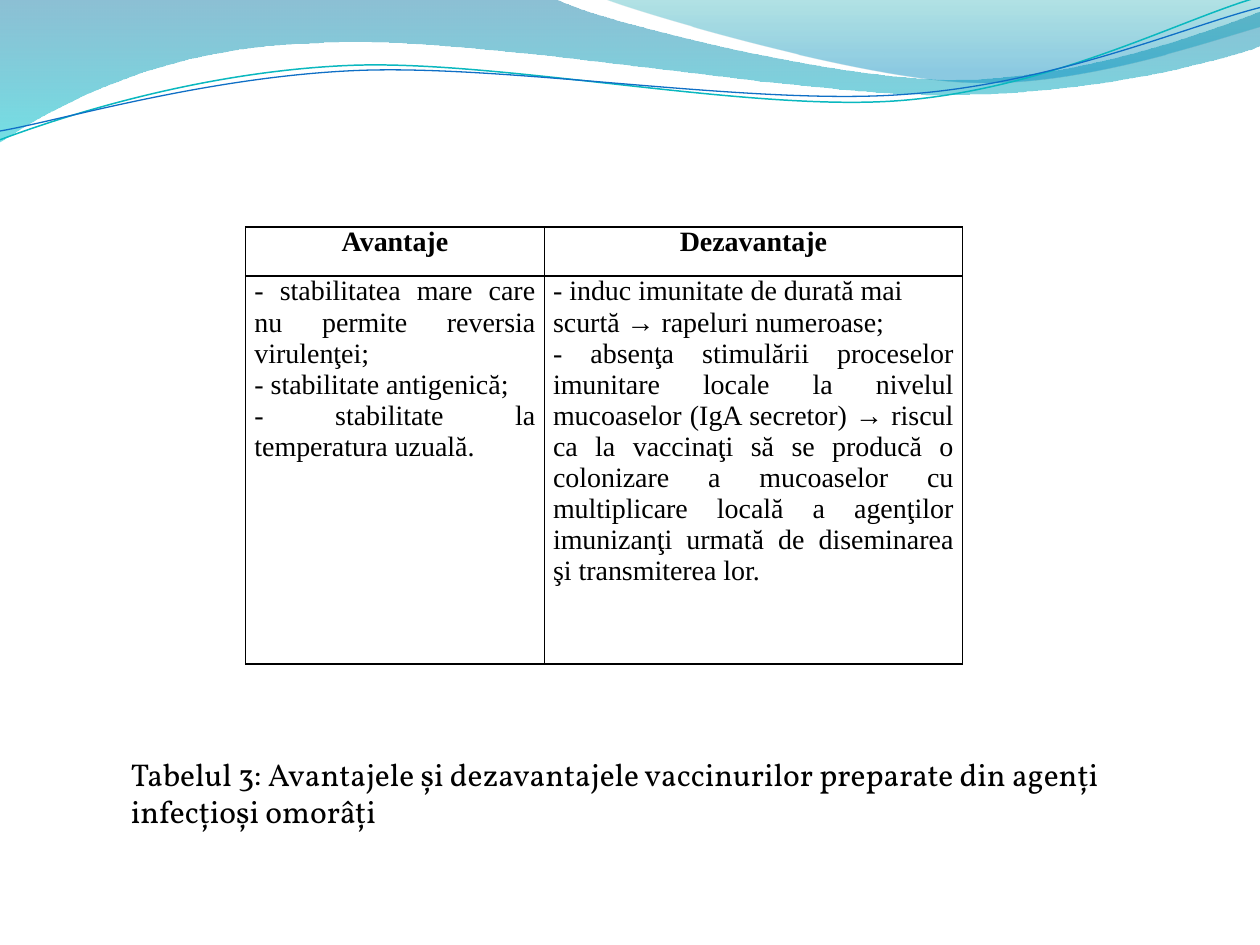
from lxml.etree import SubElement as Sub
from pptx import Presentation
from pptx.dml.color import RGBColor
from pptx.enum.lang import MSO_LANGUAGE_ID as Lang
from pptx.enum.text import PP_ALIGN as Al
from pptx.oxml.ns import qn
from pptx.util import Inches, Pt

WAVES = [
    {"start": (0, 0),
     "path": [[(4.4, -0.01)],
              [(4.76, 0.17), (6.64, 0.63), (7.58, 0.63)],
              [(8.53, 0.63), (9.58, 0.26), (10, 0.09)],
              [(10.01, 0.36)],
              [(9.83, 0.44), (8.7, 0.76), (7.46, 0.75)],
              [(6.22, 0.75), (3.82, 0.28), (2.57, 0.34)],
              [(1.29, 0.36), (0.46, 0.83), (-0.01, 1.13)],
              [(0, 0)]],
     "stops": [(0, "0074A1", 45), (100, "00C6CF", 55)]},
    {"start": (4.79, -0.01),
     "path": [[(5.09, 0.11), (6.82, 0.62), (7.69, 0.65)],
              [(8.56, 0.69), (9.61, 0.32), (10, 0.21)],
              [(10, 0)],
              [(4.79, -0.01)]],
     "stops": [(0, "00A1A9", 30), (80, "008BBF", 45)]},
    {"start": (0, 1.11),
     "path": [[(0.48, 0.93), (1.58, 0.57), (2.77, 0.52)],
              [(3.95, 0.47), (5.93, 0.89), (7.13, 0.8)],
              [(8.33, 0.71), (9.38, 0.15), (9.98, -0.02)]],
     "line": ("0AB8BF", 0.85)},
    {"start": (0, 1.04),
     "path": [[(0.47, 0.96), (1.64, 0.61), (2.83, 0.56)],
              [(4.03, 0.51), (5.97, 0.84), (7.17, 0.75)],
              [(8.36, 0.67), (9.41, 0.21), (10, 0.06)]],
     "line": ("0F6FC6", 0.75)},
]
HEADS = ["Avantaje", "Dezavantaje"]
BODY = [
    [("- stabilitatea mare care nu permite reversia virulenţei;", Al.JUSTIFY),
     ("- stabilitate antigenică;", Al.JUSTIFY),
     ("- stabilitate la temperatura uzuală.", Al.JUSTIFY)],
    [("- induc imunitate de durată mai scurtă → rapeluri numeroase;", Al.LEFT),
     ("- absenţa stimulării proceselor imunitare locale la nivelul mucoaselor "
      "(IgA secretor) → riscul ca la vaccinaţi să se producă o colonizare a "
      "mucoaselor cu multiplicare locală a agenţilor imunizanţi urmată de "
      "diseminarea şi transmiterea lor.", Al.JUSTIFY)],
]
CAPTION = ("Tabelul 3: Avantajele şi dezavantajele vaccinurilor preparate "
           "din agenţi infecţioşi omorâţi")
COLS, ROWS = [2.37, 3.32], [0.39, 3.08]


def color(code):
    return RGBColor.from_string(code)


def write(frame, paras, font="Times New Roman", size=16, bold=False, lang=None):
    frame.word_wrap = True
    for i, (text, align) in enumerate(paras):
        para = frame.paragraphs[0] if i == 0 else frame.add_paragraph()
        para.alignment = align
        run = para.add_run()
        run.text = text
        run.font.name, run.font.size = font, Pt(size)
        run.font.bold = bold
        run.font.language_id = lang
        run.font.color.rgb = color("000000")


def bend(shape, path):
    lines = iter(list(shape.element.spPr.iter(qn("a:lnTo"))))
    for part in path:
        group = [next(lines) for _ in part]
        if len(group) == 3:
            group[0].tag
            curve = group[0].getparent().makeelement(qn("a:cubicBezTo"), {})
            group[0].addprevious(curve)
            for line in group:
                curve.append(line[0])
                line.getparent().remove(line)


def wave(shapes, start, path, stops=None, line=None):
    pen = shapes.build_freeform(*map(Inches, start))
    points = [(Inches(x), Inches(y)) for part in path for x, y in part]
    pen.add_line_segments(points, close=bool(stops))
    shape = pen.convert_to_shape()
    bend(shape, path)
    shape.shadow.inherit = False
    if line:
        shape.fill.background()
        shape.line.color.rgb = color(line[0])
        shape.line.width = Pt(line[1])
        return
    shape.line.fill.background()
    shape.fill.gradient()
    shape.fill.gradient_angle = 270
    for stop, (pos, code, alpha) in zip(shape.fill.gradient_stops, stops):
        stop.position = pos / 100
        stop.color.rgb = color(code)
    tags = shape.element.spPr.iter(qn("a:srgbClr"))
    for tag, (pos, code, alpha) in zip(tags, stops):
        Sub(tag, qn("a:alpha"), val=str(alpha * 1000))


def border(cell):
    props = cell._tc.get_or_add_tcPr()
    for side in ("lnL", "lnR", "lnT", "lnB"):
        edge = Sub(props, qn(f"a:{side}"), w=str(Pt(1)))
        Sub(Sub(edge, qn("a:solidFill")), qn("a:srgbClr"), val="000000")


def grid(shapes):
    table = shapes.add_table(2, 2, Inches(1.95), Inches(1.8),
                             Inches(sum(COLS)), Inches(sum(ROWS))).table
    table.first_row = table.horz_banding = False
    for col, width in zip(table.columns, COLS):
        col.width = Inches(width)
    for row, height in zip(table.rows, ROWS):
        row.height = Inches(height)
    heads = [[(head, Al.CENTER)] for head in HEADS]
    for r, texts in enumerate([heads, BODY]):
        for c, paras in enumerate(texts):
            cell = table.cell(r, c)
            cell.margin_left = cell.margin_right = Inches(0.07)
            cell.margin_top = cell.margin_bottom = 0
            border(cell)
            cell.fill.background()
            write(cell.text_frame, paras, bold=r == 0)


def main():
    deck = Presentation()
    deck.slide_width, deck.slide_height = Inches(10), Inches(7.5)
    shapes = deck.slides.add_slide(deck.slide_layouts[6]).shapes
    for item in WAVES:
        wave(shapes, **item)
    grid(shapes)
    box = shapes.add_textbox(Inches(0.94), Inches(5.94), Inches(7.97), Inches(0.71))
    write(box.text_frame, [(CAPTION, Al.LEFT)], font="Vollkorn", size=18,
          lang=Lang.ROMANIAN)
    deck.save("out.pptx")


if __name__ == "__main__":
    main()
